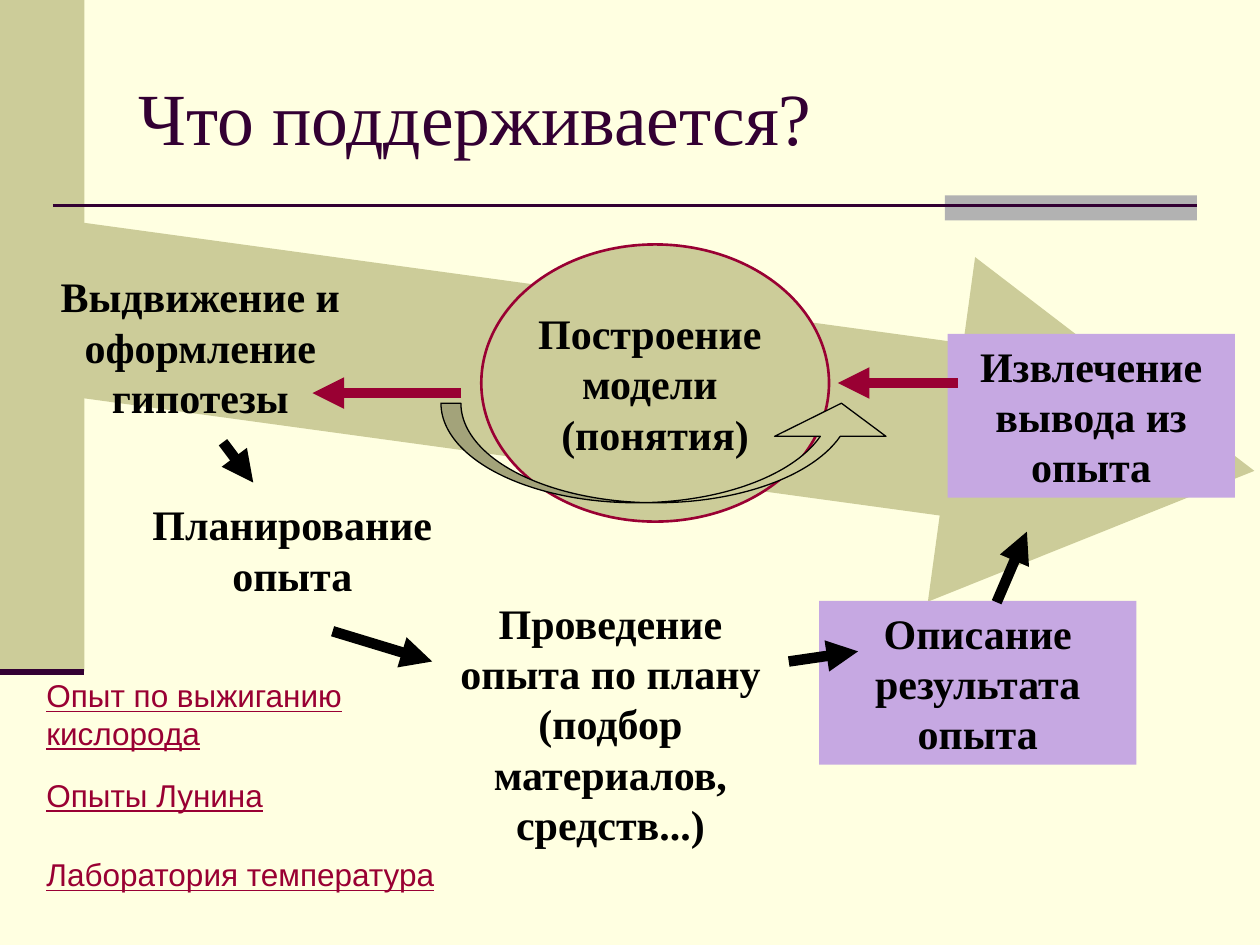
import pptx
import pptx.util
import pptx.dml.color
import pptx.enum.shapes
import pptx.enum.text
import pptx.oxml

Inches, Pt = pptx.util.Inches, pptx.util.Pt
RGBColor = pptx.dml.color.RGBColor
SHAPE = pptx.enum.shapes.MSO_SHAPE
ANCHOR = pptx.enum.text.MSO_ANCHOR
ALIGN = pptx.enum.text.PP_ALIGN
NS = 'xmlns:a="http://schemas.openxmlformats.org/drawingml/2006/main"'

CREAM = RGBColor(0xFF, 0xFF, 0xE1)
KHAKI = RGBColor(0xCC, 0xCC, 0x99)
GRAY = RGBColor(0xB2, 0xB2, 0xB2)
PLUM = RGBColor(0x33, 0x00, 0x33)
WINE = RGBColor(0x99, 0x00, 0x33)
LILAC = RGBColor(0xC6, 0xA8, 0xE2)
BLACK = RGBColor(0, 0, 0)

deck = pptx.Presentation()
deck.slide_width, deck.slide_height = Inches(10), Inches(7.5)
slide = deck.slides.add_slide(deck.slide_layouts[5])
slide.background.fill.solid()
slide.background.fill.fore_color.rgb = CREAM


def add_form(kind, box, fill=None, edge=None, width=0.75):
    form = slide.shapes.add_shape(kind, *map(Inches, box))
    form.shadow.inherit = False
    if fill is None:
        form.fill.background()
    else:
        form.fill.solid()
        form.fill.fore_color.rgb = fill
    if edge is None:
        form.line.fill.background()
    else:
        form.line.color.rgb = edge
        form.line.width = Pt(width)
    return form


def add_line(start, end, color, width, head=False):
    line = slide.shapes.add_connector(
        pptx.enum.shapes.MSO_CONNECTOR.STRAIGHT, *map(Inches, start + end))
    line.line.color.rgb = color
    line.line.width = Pt(width)
    if head:
        line.line._get_or_add_ln().append(
            pptx.oxml.parse_xml(f'<a:tailEnd {NS} type="triangle"/>'))
    line._element.spPr.append(pptx.oxml.parse_xml(f"<a:effectLst {NS}/>"))


# Side band and rule under the title
add_form(SHAPE.RECTANGLE, (0, 0, 0.67, 5.33), KHAKI)
add_form(SHAPE.RECTANGLE, (7.5, 1.55, 2, 0.2), GRAY)
add_line((0.42, 1.63), (9.5, 1.63), PLUM, 1.5)
add_line((0, 5.33), (0.67, 5.33), PLUM, 3.5)

# Title
title = slide.shapes.title
title.left, title.top, title.width, title.height = map(Inches, (1, 0.3, 8.5, 1.25))
title.text_frame.text = "Что поддерживается?"
title.text_frame.vertical_anchor = ANCHOR.MIDDLE
para = title.text_frame.paragraphs[0]
para.alignment = ALIGN.LEFT
para.font.name, para.font.size = "Times New Roman", Pt(42)
para.font.color.rgb = PLUM

# Wide arrow behind the cycle
arrow = add_form(SHAPE.RIGHT_ARROW, (0.31, 1.7, 9.69, 2.76), KHAKI)
arrow.rotation = 7.8
arrow.adjustments[0], arrow.adjustments[1] = 0.5, 0.879

# Steps of the cycle, with the model in the ellipse
steps = [
    ("Выдвижение и оформление гипотезы", (0.27, 2.1, 2.64, 1.3), None),
    ("Планирование опыта", (1.06, 3.91, 2.52, 0.9), None),
    ("Проведение опыта по плану (подбор материалов, средств...)",
     (3.35, 4.69, 2.99, 2.1), None),
    ("Описание результата опыта", (6.5, 4.77, 2.52, 1.3), LILAC),
    ("Извлечение вывода из опыта", (7.52, 2.65, 2.28, 1.3), LILAC),
    ("Построение \nмодели \n(понятия)", (3.82, 1.94, 2.76, 2.2), KHAKI),
]
for text, box, fill in steps:
    model = "\n" in text
    if model:
        form = add_form(SHAPE.OVAL, box, fill, WINE, 1.5)
    elif fill:
        form = add_form(SHAPE.RECTANGLE, box, fill)
    else:
        form = slide.shapes.add_textbox(*map(Inches, box))
    frame = form.text_frame
    frame.text = text
    frame.word_wrap = not model
    frame.vertical_anchor = ANCHOR.MIDDLE if model else ANCHOR.TOP
    for para in frame.paragraphs:
        para.alignment = ALIGN.CENTER
        para.font.name, para.font.size = "Times New Roman", Pt(24)
        para.font.bold = True
        para.font.color.rgb = BLACK

# Arrows between the steps
for start, end, color in [
    ((1.77, 3.51), (2.01, 3.83), BLACK),
    ((2.64, 5.01), (3.43, 5.25), BLACK),
    ((7.91, 4.78), (8.15, 4.22), BLACK),
    ((6.26, 5.25), (6.81, 5.17), BLACK),
    ((3.66, 3.12), (2.48, 3.12), WINE),
    ((7.6, 3.04), (6.65, 3.04), WINE),
]:
    add_line(start, end, color, 6, head=True)

# Curved arrow around the model
curve = add_form(SHAPE.CURVED_UP_ARROW, (3.5, 3.2, 3.62, 0.79), KHAKI, BLACK)
for i, value in enumerate((0.2, 1.119, 0.333)):
    curve.adjustments[i] = value

# Underlined list of experiments
for text, box in [
    ("Опыт по выжиганию кислорода", (0.27, 5.32, 2.91, 0.7)),
    ("Опыты Лунина", (0.27, 6.11, 2.2, 0.4)),
    ("Лаборатория температура", (0.27, 6.74, 3.47, 0.4)),
]:
    frame = slide.shapes.add_textbox(*map(Inches, box)).text_frame
    frame.text = text
    frame.word_wrap = True
    para = frame.paragraphs[0]
    para.font.name, para.font.size = "Arial", Pt(18)
    para.font.underline = True
    para.font.color.rgb = WINE

deck.save("out.pptx")
